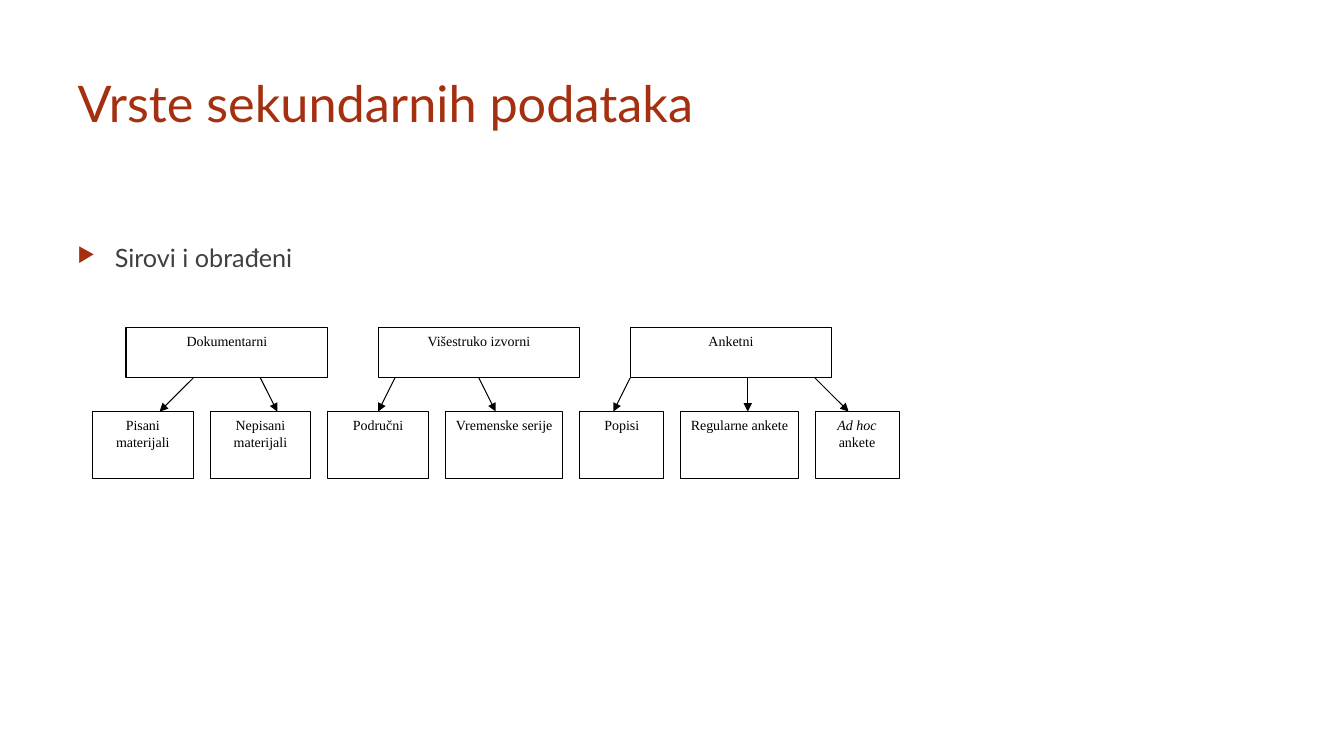
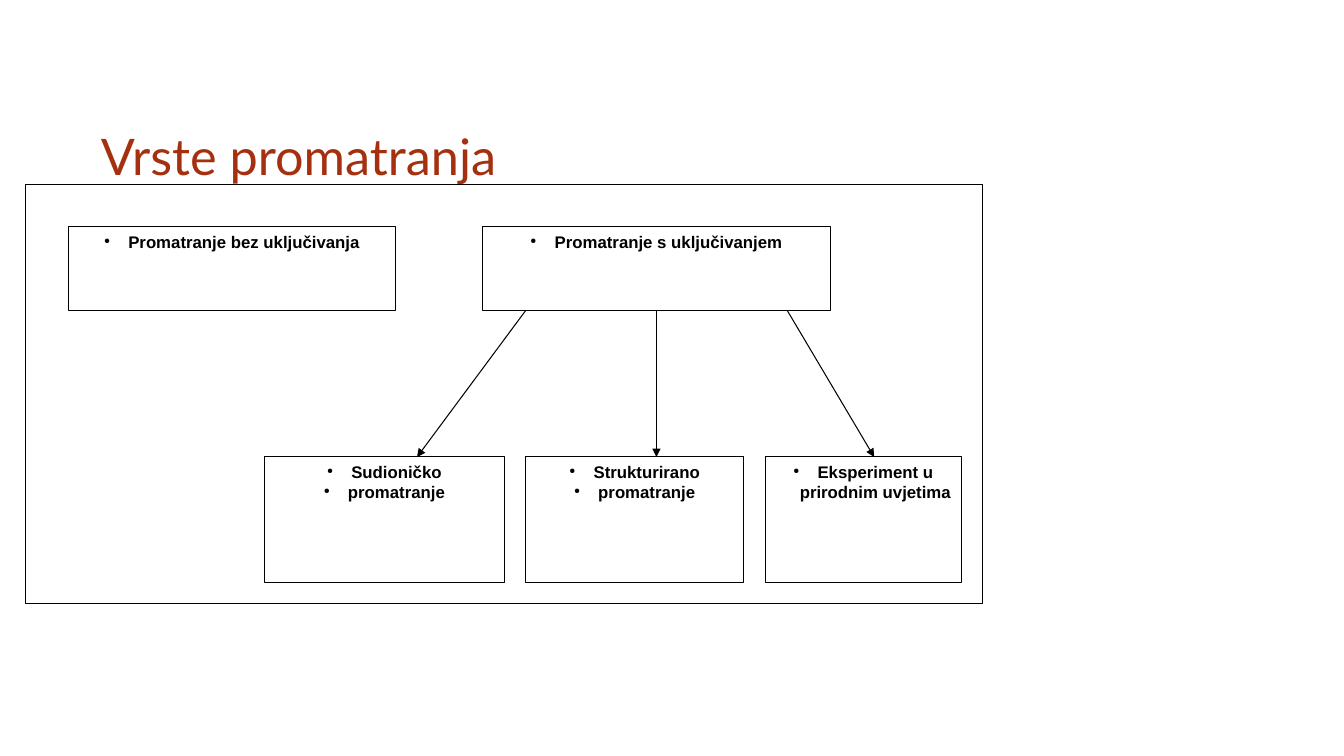
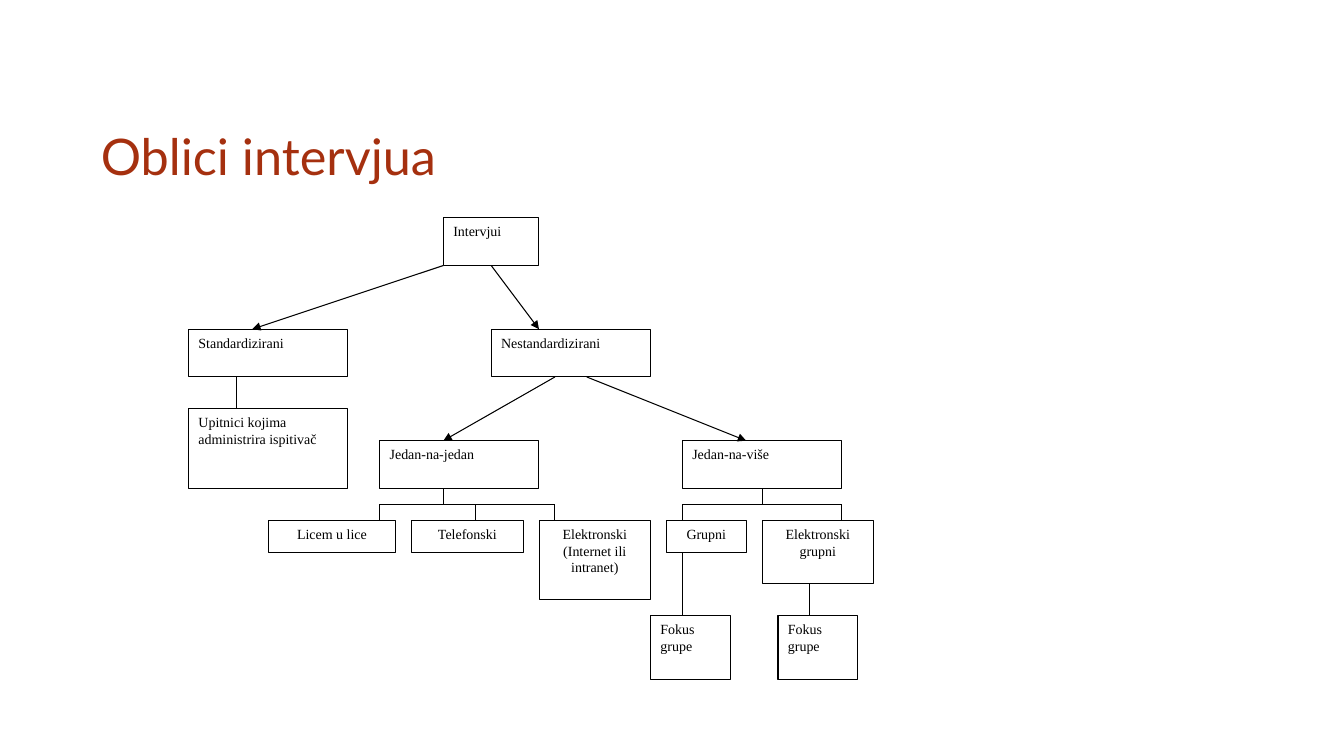
from pptx import Presentation
from pptx.dml.color import RGBColor
from pptx.enum.shapes import MSO_CONNECTOR, MSO_SHAPE
from pptx.enum.text import MSO_ANCHOR, MSO_AUTO_SIZE, PP_ALIGN
from pptx.oxml.ns import qn
from pptx.util import Inches, Pt
from lxml.etree import SubElement

RUST = RGBColor(0xA5, 0x30, 0x0F)
GREY = RGBColor(0x40, 0x40, 0x40)
BLACK = RGBColor(0, 0, 0)
WHITE = RGBColor(0xFF, 0xFF, 0xFF)
LEFT, CENTER = PP_ALIGN.LEFT, PP_ALIGN.CENTER

# Title areas: left, top, width, height, anchor
HIGH_TITLE = (0.67, 0.67, 6.94, 1.44, MSO_ANCHOR.TOP)
LOW_TITLE = (0.9, 0.31, 8.25, 1.58, MSO_ANCHOR.BOTTOM)

# Diagrams are laid out in whole grid units.
# Boxes: text (*italic*), left, top, width, height, alignment
# Links: from x, y, to x, y, arrowhead

# Secondary data: children stand in a row with equal gaps
SOURCES = [("Dokumentarni", 15), ("Višestruko izvorni", 45), ("Anketni", 75)]
KINDS = [("Pisani\nmaterijali", 12), ("Nepisani\nmaterijali", 12),
         ("Područni", 12), ("Vremenske serije", 14), ("Popisi", 10),
         ("Regularne ankete", 14), ("*Ad hoc* ankete", 10)]
KIND_LEFT, KIND_GAP = 11, 2
KIND_ARROWS = [(23, 19), (31, 33), (47, 45), (57, 59), (75, 73), (89, 89),
               (97, 101)]

# Observation
OBSERVATION = [
    ("", 0, 0, 44, 20, CENTER),
    ("Promatranje bez uključivanja", 2, 2, 15, 4, CENTER),
    ("Promatranje s uključivanjem", 21, 2, 16, 4, CENTER),
    ("Sudioničko\npromatranje", 11, 13, 11, 6, CENTER),
    ("Strukturirano\npromatranje", 23, 13, 10, 6, CENTER),
    ("Eksperiment u prirodnim uvjetima", 34, 13, 9, 6, CENTER),
]
OBSERVATION_ARROWS = [(23, 18), (29, 29), (35, 39)]

# Interviews
INTERVIEWS = [
    ("Intervjui", 16, 0, 6, 3, LEFT),
    ("Standardizirani", 0, 7, 10, 3, LEFT),
    ("Nestandardizirani", 19, 7, 10, 3, LEFT),
    ("Upitnici kojima administrira ispitivač", 0, 12, 10, 5, LEFT),
    ("Jedan-na-jedan", 12, 14, 10, 3, LEFT),
    ("Jedan-na-više", 31, 14, 10, 3, LEFT),
    ("Licem u lice", 5, 19, 8, 2, CENTER),
    ("Telefonski", 14, 19, 7, 2, CENTER),
    ("Elektronski (Internet ili intranet)", 22, 19, 7, 5, CENTER),
    ("Grupni", 30, 19, 5, 2, CENTER),
    ("Elektronski grupni", 36, 19, 7, 4, CENTER),
    ("Fokus\ngrupe", 29, 25, 5, 4, LEFT),
    ("Fokus\ngrupe", 37, 25, 5, 4, LEFT),
]
INTERVIEW_LINKS = [
    (16, 3, 4, 7, True), (19, 3, 22, 7, True),
    (23, 10, 16, 14, True), (25, 10, 35, 14, True),
    (3, 10, 3, 12, False), (31, 21, 31, 25, False), (39, 23, 39, 25, False),
]
# Brackets: stem x, drop xs
INTERVIEW_BRACKETS = [(16, (12, 18, 23)), (36, (31, 41))]
STEM_TOP, BAR, DROP_END = 17, 18, 19


def add_run(p, text, font, size, color, bold=False, italic=False):
    r = p.add_run()
    r.text = text
    f = r.font
    f.name, f.size, f.bold, f.italic = font, Pt(size), bold, italic
    f.color.rgb = color


def add_bullet(p, char, color, percent, indent):
    pPr = p._p.get_or_add_pPr()
    pPr.set("marL", str(Inches(indent)))
    pPr.set("indent", str(-Inches(indent)))
    SubElement(SubElement(pPr, qn("a:buClr")), qn("a:srgbClr"), val=str(color))
    SubElement(pPr, qn("a:buSzPct"), val=str(percent * 1000))
    SubElement(pPr, qn("a:buChar"), char=char)


def add_slide(prs, title, area):
    s = prs.slides.add_slide(prs.slide_layouts[5])
    sp = s.shapes.title
    sp.left, sp.top, sp.width, sp.height = (Inches(v) for v in area[:4])
    tf = sp.text_frame
    tf.auto_size = MSO_AUTO_SIZE.NONE
    tf.word_wrap = True
    tf.vertical_anchor = area[4]
    p = tf.paragraphs[0]
    p.alignment = LEFT
    add_run(p, title, "Lato", 36, RUST)
    return s


def add_box(s, text, rect, align, font, size, bulleted):
    sp = s.shapes.add_shape(MSO_SHAPE.RECTANGLE, *rect)
    sp.shadow.inherit = False
    sp.fill.solid()
    sp.fill.fore_color.rgb = WHITE
    sp.line.color.rgb = BLACK
    sp.line.width = Pt(0.75)
    if not text:
        return sp
    tf = sp.text_frame
    tf.word_wrap = True
    tf.vertical_anchor = MSO_ANCHOR.TOP
    for i, line in enumerate(text.split("\n")):
        p = tf.add_paragraph() if i else tf.paragraphs[0]
        p.alignment = align
        if bulleted:
            add_bullet(p, "●", BLACK, 45, 0.24)
        for j, part in enumerate(line.split("*")):
            if part:
                add_run(p, part, font, size, BLACK, bulleted, j % 2 == 1)
    return sp


def add_diagram(s, origin, unit, boxes, links,
                font="Times New Roman", size=10, bulleted=False):
    def place(x, y):
        return (Inches(origin[0] + x * unit[0]),
                Inches(origin[1] + y * unit[1]))

    sides = {}  # middle of a top or bottom side -> (box, site)
    for text, x, y, w, h, align in boxes:
        left, top = place(x, y)
        right, bottom = place(x + w, y + h)
        rect = (left, top, right - left, bottom - top)
        sp = add_box(s, text, rect, align, font, size, bulleted)
        sides[x + w / 2, y] = sp, 0
        sides[x + w / 2, y + h] = sp, 2

    for x1, y1, x2, y2, arrow in links:
        c = s.shapes.add_connector(MSO_CONNECTOR.STRAIGHT,
                                   *place(x1, y1), *place(x2, y2))
        c.line.color.rgb = BLACK
        c.line.width = Pt(0.75)
        if arrow:
            SubElement(c.line._get_or_add_ln(), qn("a:tailEnd"),
                       type="triangle")
        SubElement(c._element.spPr, qn("a:effectLst"))
        if (x1, y1) in sides:
            c.begin_connect(*sides[x1, y1])
        if (x2, y2) in sides:
            c.end_connect(*sides[x2, y2])


def secondary_data(prs):
    s = add_slide(prs, "Vrste sekundarnih podataka", HIGH_TITLE)
    tb = s.shapes.add_textbox(Inches(0.67), Inches(2.36),
                              Inches(6.94), Inches(4.24))
    tf = tb.text_frame
    tf.word_wrap = True
    p = tf.paragraphs[0]
    p.space_before = Pt(10)
    add_bullet(p, "▶", RUST, 80, 0.37)
    add_run(p, "Sirovi i obrađeni", "Lato", 18, GREY)

    boxes = [(text, x, 39, 24, 6, CENTER) for text, x in SOURCES]
    x = KIND_LEFT
    for text, w in KINDS:
        boxes.append((text, x, 49, w, 8, CENTER))
        x += w + KIND_GAP
    links = [(a, 45, b, 49, True) for a, b in KIND_ARROWS]
    add_diagram(s, (0, 0), (1 / 12, 1 / 12), boxes, links)


def observation(prs):
    s = add_slide(prs, "Vrste promatranja", LOW_TITLE)
    links = [(a, 6, b, 13, True) for a, b in OBSERVATION_ARROWS]
    add_diagram(s, (0.25, 1.83), (9.5 / 44, 4.16 / 20), OBSERVATION, links,
                "Arial", 12, bulleted=True)


def interviews(prs):
    s = add_slide(prs, "Oblici intervjua", LOW_TITLE)
    links = list(INTERVIEW_LINKS)
    for stem, drops in INTERVIEW_BRACKETS:
        links.append((stem, STEM_TOP, stem, BAR, False))
        links.append((drops[0], BAR, drops[-1], BAR, False))
        links += [(x, BAR, x, DROP_END, False) for x in drops]
    add_diagram(s, (1.87, 2.16), (1.58 / 10, 1.58 / 10), INTERVIEWS, links)


def main():
    prs = Presentation()
    prs.slide_width, prs.slide_height = Inches(13.33), Inches(7.5)
    secondary_data(prs)
    observation(prs)
    interviews(prs)
    prs.save("out.pptx")


if __name__ == "__main__":
    main()
